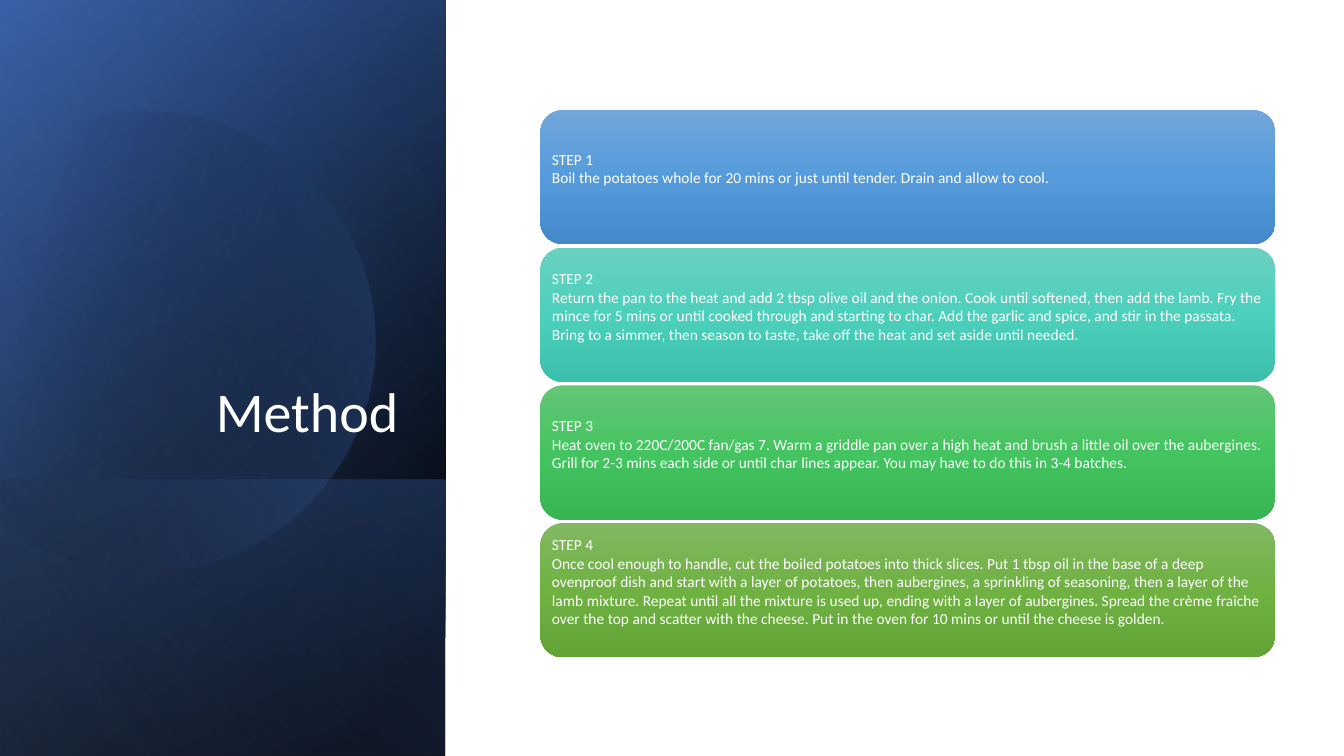
import math

import pptx
import pptx.dml.color
import pptx.enum.shapes
import pptx.enum.text
import pptx.oxml
import pptx.oxml.ns
import pptx.util

Pt = pptx.util.Pt
FONT = "Calibri"
COLORS = {
    "white": "FFFFFF", "black": "000000", "navy": "2F5597",
    "blue": "4472C4", "pale": "8FAADC",
}
STEPS = [
    (("71A6DB", "559BDB", "448ACA"),
     "Boil the potatoes whole for 20 mins or just until tender. Drain and allow to cool."),
    (("6AD1C0", "4CD0BC", "3CC0AC"),
     "Return the pan to the heat and add 2 tbsp olive oil and the onion. Cook until "
     "softened, then add the lamb. Fry the mince for 5 mins or until cooked through and "
     "starting to char. Add the garlic and spice, and stir in the passata. Bring to a "
     "simmer, then season to taste, take off the heat and set aside until needed."),
    (("64C677", "44C460", "36B552"),
     "Heat oven to 220C/200C fan/gas 7. Warm a griddle pan over a high heat and brush a "
     "little oil over the aubergines. Grill for 2-3 mins each side or until char lines "
     "appear. You may have to do this in 3-4 batches."),
    (("81B861", "6FB242", "62A336"),
     "Once cool enough to handle, cut the boiled potatoes into thick slices. Put 1 tbsp "
     "oil in the base of a deep ovenproof dish and start with a layer of potatoes, then "
     "aubergines, a sprinkling of seasoning, then a layer of the lamb mixture. Repeat "
     "until all the mixture is used up, ending with a layer of aubergines. Spread the "
     "crème fraîche over the top and scatter with the cheese. Put in the oven for 10 mins "
     "or until the cheese is golden."),
]
# Outline of the disc in points on the slide: a start, then curves and lines
DISC_START = (107.3, 79.2)
DISC_PATH = [
    [(177.1, 80.6), (241.2, 127.4), (261.4, 198)],
    [(286.6, 285.8), (236.2, 376.6), (149, 401.8)],
    [(94.3, 417.6), (38.2, 403.9), (-2.2, 370.1)],
    [(-10.8, 362.2)],
    [(-10.8, 126)],
    [(0, 115.9)],
    [(16.6, 102.2), (36, 92.2), (57.6, 85.7)],
    [(74.2, 81.4), (90.7, 79.2), DISC_START],
]
DISC_MID = (114.1, 240.8)
DISC_TURN = 343.9


def shade(shape, stops, angle):
    """Fill with a gradient of (position, hex, opacity) stops, without line or shadow."""
    shape.shadow.inherit = False
    shape.line.fill.background()
    shape.fill.background()
    marks = "".join(
        f'<a:gs pos="{pos * 1000}"><a:srgbClr val="{color}">'
        f'<a:alpha val="{alpha * 1000}"/></a:srgbClr></a:gs>'
        for pos, color, alpha in stops)
    grad = pptx.oxml.parse_xml(
        f'<a:gradFill {pptx.oxml.ns.nsdecls("a")} rotWithShape="1"><a:gsLst>{marks}'
        f'</a:gsLst><a:lin ang="{angle * 60000}" scaled="0"/></a:gradFill>')
    props = shape._element.spPr
    props.replace(props.find(pptx.oxml.ns.qn("a:noFill")), grad)


def add_panel(slide, box, stops, angle):
    """Add a mirrored rectangle turned by a quarter."""
    kind = pptx.enum.shapes.MSO_SHAPE.RECTANGLE
    panel = slide.shapes.add_shape(kind, *map(Pt, box))
    panel.rotation = 90
    panel._element.spPr.find(pptx.oxml.ns.qn("a:xfrm")).set("flipH", "1")
    shade(panel, stops, angle)


def trace(start, path, count=24):
    """Return the points of a path whose cubic curves are cut into short lines."""
    points = [start]
    for part in path:
        if len(part) == 1:
            points += part
            continue
        ends = [points[-1], *part]
        for n in range(1, count + 1):
            t = n / count
            mix = [math.comb(3, k) * (1 - t) ** (3 - k) * t ** k for k in range(4)]
            points.append(tuple(sum(m * p[axis] for m, p in zip(mix, ends))
                                for axis in (0, 1)))
    return points


def add_disc(slide):
    turn = math.radians(360 - DISC_TURN)
    cos, sin = math.cos(turn), math.sin(turn)
    mid_x, mid_y = DISC_MID
    points = [(100 * (mid_x + (x - mid_x) * cos - (y - mid_y) * sin),
               100 * (mid_y + (x - mid_x) * sin + (y - mid_y) * cos))
              for x, y in trace(DISC_START, DISC_PATH)]
    maker = slide.shapes.build_freeform(*points[0], scale=Pt(1) / 100)
    maker.add_line_segments(points[1:], close=True)
    disc = maker.convert_to_shape()
    disc.rotation = DISC_TURN
    shade(disc, [(29, COLORS["black"], 0), (100, COLORS["blue"], 43)], 30)


def style(para, size, align):
    para.alignment = align
    para.font.size = Pt(size)
    para.font.name = FONT
    para.font.color.rgb = pptx.dml.color.RGBColor.from_string(COLORS["white"])


def add_title(slide, text):
    frame = slide.shapes.add_textbox(Pt(46), Pt(132.5), Pt(245.5), Pt(188.6)).text_frame
    frame.word_wrap = True
    frame.vertical_anchor = pptx.enum.text.MSO_ANCHOR.BOTTOM
    frame.text = text
    para = frame.paragraphs[0]
    para.line_spacing = 0.9
    style(para, 40, pptx.enum.text.PP_ALIGN.RIGHT)


def add_step(slide, index, tones, text):
    kind = pptx.enum.shapes.MSO_SHAPE.ROUNDED_RECTANGLE
    card = slide.shapes.add_shape(
        kind, Pt(386), Pt(78.5 + 98.4 * index), Pt(525), Pt(95.8))
    shade(card, [(pos, tone, 100) for pos, tone in zip((0, 50, 100), tones)], 90)
    frame = card.text_frame
    frame.word_wrap = True
    frame.vertical_anchor = pptx.enum.text.MSO_ANCHOR.MIDDLE
    frame.margin_left = frame.margin_right = frame.margin_top = Pt(3.6)
    frame.margin_bottom = Pt(15.6)
    frame.text = f"STEP {index + 1}\n{text}"
    for para in frame.paragraphs:
        style(para, 11, pptx.enum.text.PP_ALIGN.LEFT)


def main():
    deck = pptx.Presentation()
    deck.slide_width, deck.slide_height = Pt(960), Pt(540)
    slide = deck.slides.add_slide(deck.slide_layouts[6])
    black, blue = COLORS["black"], COLORS["blue"]
    side = (-110.9, 110.9, 540, 318.2)
    foot = (60.5, 282.2, 197.3, 318.2)
    add_panel(slide, side, [(8, black, 100), (100, COLORS["navy"], 100)], 50)
    add_panel(slide, side, [(0, black, 0), (99, blue, 46)], 30)
    add_panel(slide, foot, [(2, blue, 29), (100, black, 30)], 130)
    add_disc(slide)
    add_panel(slide, side, [(0, black, 0), (99, COLORS["pale"], 11)], 120)
    add_title(slide, "Method")
    for index, (tones, text) in enumerate(STEPS):
        add_step(slide, index, tones, text)
    deck.save("out.pptx")


if __name__ == "__main__":
    main()
